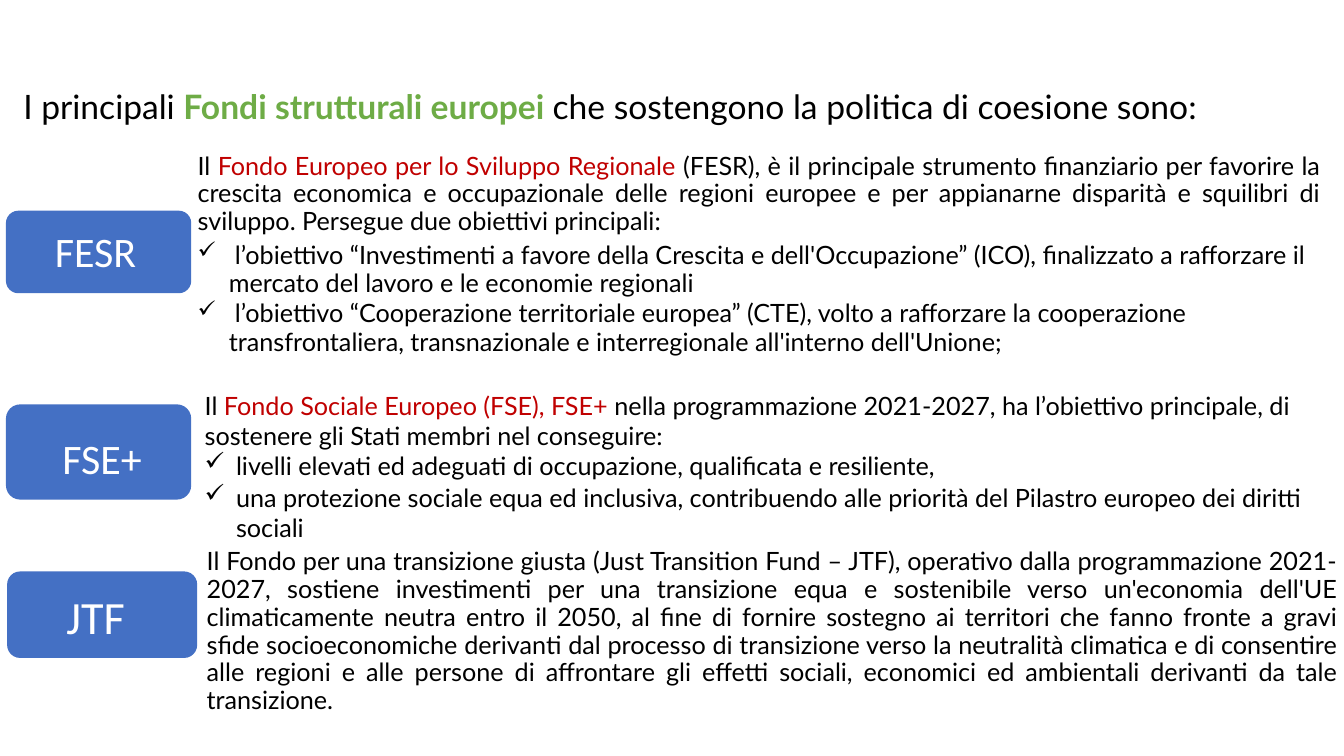
"""Builds a slide on the main European structural funds for cohesion policy."""
import pptx
import pptx.util
import pptx.dml.color
import pptx.enum.shapes
import pptx.enum.text
import lxml.etree
from pptx.oxml.ns import qn

Cm = pptx.util.Cm
Pt = pptx.util.Pt
RGBColor = pptx.dml.color.RGBColor
PP_ALIGN = pptx.enum.text.PP_ALIGN

BLACK = RGBColor(0x00, 0x00, 0x00)
WHITE = RGBColor(0xFF, 0xFF, 0xFF)
GREEN = RGBColor(0x6E, 0xAC, 0x46)
RED = RGBColor(0xC0, 0x00, 0x00)
BLUE = RGBColor(0x44, 0x70, 0xC4)
HANG = Cm(0.79)


def write_paragraph(frame, *pieces, size=18, font="Lato", color=BLACK, accent=RED, bold_accent=False,
                    align=PP_ALIGN.LEFT, spacing=None, before=0, tick=False, tab=None):
    """Adds a paragraph; every second piece takes the accent colour."""
    para = frame.paragraphs[0]
    if para.runs:
        para = frame.add_paragraph()
    para.alignment = align
    para.line_spacing = spacing
    para.space_before = Pt(before)
    if tick:
        properties = para._p.get_or_add_pPr()
        properties.set("marL", str(HANG))
        properties.set("indent", str(-HANG))
        lxml.etree.SubElement(properties, qn("a:buChar"), char="✓")
        stops = lxml.etree.SubElement(properties, qn("a:tabLst"))
        for stop in (HANG, tab):
            if stop:
                lxml.etree.SubElement(stops, qn("a:tab"), pos=str(stop), algn="l")
    if tab:
        span = para.add_run()
        span.text = "\t"
        span.font.size = Pt(16.5)
        span.font.name = font
        span.font.color.rgb = color
    for index, piece in enumerate(pieces):
        span = para.add_run()
        span.text = piece
        span.font.name = font
        span.font.size = Pt(size)
        span.font.bold = bold_accent and index % 2 == 1
        span.font.color.rgb = accent if index % 2 else color


def set_frame(frame, left=0, top=0):
    """Sets wrapping and insets, in centimetres."""
    frame.word_wrap = True
    frame.vertical_anchor = pptx.enum.text.MSO_ANCHOR.TOP
    frame.margin_left, frame.margin_top = Cm(left), Cm(top)
    frame.margin_right = frame.margin_bottom = 0
    return frame


deck = pptx.Presentation()
deck.slide_width = Cm(33.87)
deck.slide_height = Cm(19.05)
page = deck.slides.add_slide(deck.slide_layouts[6])

badges = [
    ("FESR", 30, (0.15, 5.31, 4.67, 2.08), (1.14, 0.28)),
    ("FSE+", 30, (0.15, 10.19, 4.67, 2.4), (1.32, 0.61)),
    ("JTF", 33, (0.18, 14.4, 4.79, 2.18), (1.4, 0.33)),
]
for name, size, place, inset in badges:
    badge = page.shapes.add_shape(pptx.enum.shapes.MSO_SHAPE.ROUNDED_RECTANGLE, *map(Cm, place))
    badge.adjustments[0] = 0.15
    badge.shadow.inherit = False
    badge.fill.solid()
    badge.fill.fore_color.rgb = BLUE
    badge.line.fill.background()
    write_paragraph(set_frame(badge.text_frame, *inset), name, size=size, font="Calibri", color=WHITE)

places = [
    (0.59, 2.16, 32.7, 1.05),
    (4.98, 3.84, 28.3, 5.1),
    (5.16, 9.83, 28.55, 3.87),
    (5.21, 13.82, 28.5, 4.2),
]
title, fesr, fse, jtf = [
    set_frame(page.shapes.add_textbox(*map(Cm, place)).text_frame) for place in places
]

write_paragraph(title, "I principali ", "Fondi strutturali europei ",
                "che sostengono la politica di coesione sono:",
                size=24, accent=GREEN, bold_accent=True)

write_paragraph(fesr, "Il ", "Fondo Europeo per lo Sviluppo Regionale ",
                "(FESR), è il principale strumento finanziario per favorire la crescita economica e "
                "occupazionale delle regioni europee e per appianarne disparità e squilibri di sviluppo. "
                "Persegue due obiettivi principali:",
                align=PP_ALIGN.JUSTIFY, spacing=Pt(19.8))
goals = [
    ("l’obiettivo “Investimenti a favore della Crescita e dell'Occupazione” (ICO), finalizzato a "
     "rafforzare il mercato del lavoro e le economie regionali", 4),
    ("l’obiettivo “Cooperazione territoriale europea” (CTE), volto a rafforzare la cooperazione "
     "transfrontaliera, transnazionale e interregionale all'interno dell'Unione;", 2),
]
for goal, before in goals:
    write_paragraph(fesr, goal, spacing=Pt(20), before=before, tick=True, tab=Cm(0.94))

write_paragraph(fse, "Il ", "Fondo Sociale Europeo (FSE), FSE+ ",
                "nella programmazione 2021-2027, ha l’obiettivo principale, di sostenere gli Stati "
                "membri nel conseguire:")
write_paragraph(fse, "livelli elevati ed adeguati di occupazione, qualificata e resiliente,", tick=True)
write_paragraph(fse, "una protezione sociale equa ed inclusiva, contribuendo alle priorità del Pilastro "
                "europeo dei diritti sociali", before=1, tick=True)

write_paragraph(jtf, "Il Fondo per una transizione giusta (Just Transition Fund – JTF), operativo dalla "
                "programmazione 2021-2027, sostiene investimenti per una transizione equa e sostenibile "
                "verso un'economia dell'UE climaticamente neutra entro il 2050, al fine di fornire "
                "sostegno ai territori che fanno fronte a gravi sfide socioeconomiche derivanti dal "
                "processo di transizione verso la neutralità climatica e di consentire alle regioni e "
                "alle persone di affrontare gli effetti sociali, economici ed ambientali derivanti da "
                "tale transizione.", align=PP_ALIGN.JUSTIFY, spacing=0.92)

deck.save("out.pptx")
